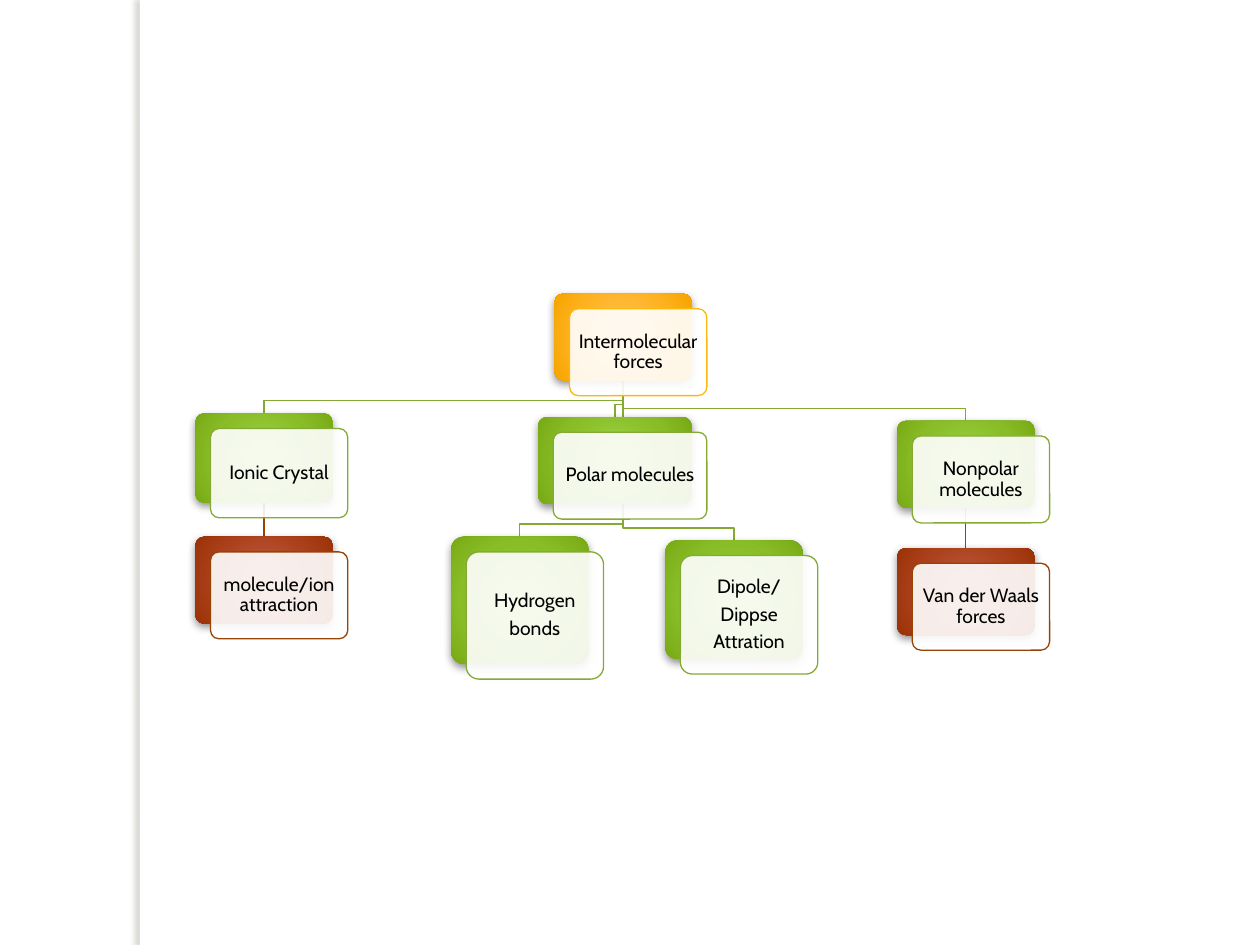
from dataclasses import dataclass
from typing import Optional

from lxml.etree import SubElement
from pptx import Presentation
from pptx.dml.color import RGBColor
from pptx.enum.shapes import MSO_CONNECTOR, MSO_SHAPE
from pptx.enum.text import MSO_ANCHOR, PP_ALIGN
from pptx.oxml.ns import qn
from pptx.util import Inches, Pt

COLORS = {"white": "FFFFFF", "black": "000000", "edge": "736F63",
          "gold": "FEB80A", "green": "84AA33", "brown": "964305"}
SHADES = {"gold": ["FFBF54", "FFBF53", "FFB221", "F6A500", "D69900"],
          "green": ["9AD041", "9ACF41", "88BD27", "79AB17", "77AC08"],
          "brown": ["BD583A", "BC573A", "AB411C", "9C3308", "7E3600"]}
STOPS = [0, 15, 62, 97, 100]
SHIFT = (0.12, 0.12)  # front panel against its back panel
DROP = 0.1            # last leg of a branch line
FONT = {"name": "Cabin", "size": Pt(11)}
PARA = {"alignment": PP_ALIGN.CENTER, "line_spacing": 0.9,
        "space_after": Pt(3.85)}
FRAME = {"word_wrap": True, "vertical_anchor": MSO_ANCHOR.MIDDLE,
         **{f"margin_{side}": Inches(0.03)
            for side in ("left", "right", "top", "bottom")}}


@dataclass
class Card:
    lines: list[str]
    hue: str
    left: float
    top: float
    wide: float = 1.09
    high: float = 0.69
    above: Optional["Card"] = None

    @property
    def mid(self) -> float:
        return self.left + self.wide / 2


def rgb(key: str) -> RGBColor:
    return RGBColor.from_string(COLORS[key])


def apply(target, values: dict) -> None:
    for name, value in values.items():
        setattr(target, name, value)


def add_tag(root, tag: str, **attrs):
    return SubElement(root, qn(f"a:{tag}"),
                      {key: str(value) for key, value in attrs.items()})


def add_shade(shape, key: str, alpha: int, blur: int, dist: int,
              angle: int) -> None:
    shape.shadow.inherit = False
    effects = shape.element.spPr.find(qn("a:effectLst"))
    shade = add_tag(effects, "outerShdw", blurRad=Pt(blur), dist=Pt(dist),
                    dir=angle * 60000, rotWithShape=0)
    color = add_tag(shade, "srgbClr", val=COLORS[key])
    add_tag(color, "alpha", val=alpha * 1000)


def add_glow(shape, hue: str) -> None:
    """Give the shape a round gradient, lightest in the middle."""
    shape.fill.solid()
    props = shape.element.spPr
    plain = props.find(qn("a:solidFill"))
    grad = add_tag(props, "gradFill", rotWithShape=1)
    stops = add_tag(grad, "gsLst")
    for pos, color in zip(STOPS, SHADES[hue]):
        stop = add_tag(stops, "gs", pos=pos * 1000)
        add_tag(stop, "srgbClr", val=color)
    focus = add_tag(grad, "path", path="circle")
    add_tag(focus, "fillToRect", l=50000, t=50000, r=50000, b=50000)
    props.replace(plain, grad)


def add_panel(slide, left: float, top: float, card: Card):
    panel = slide.shapes.add_shape(
        MSO_SHAPE.ROUNDED_RECTANGLE, Inches(left), Inches(top),
        Inches(card.wide), Inches(card.high))
    panel.adjustments[0] = 0.1
    panel.shadow.inherit = False
    return panel


def add_card(slide, card: Card) -> None:
    back = add_panel(slide, card.left, card.top, card)
    add_glow(back, card.hue)
    back.line.fill.background()
    add_shade(back, "black", 43, 5, 2, 90)

    front = add_panel(slide, card.left + SHIFT[0], card.top + SHIFT[1], card)
    front.fill.solid()
    front.fill.fore_color.rgb = rgb("white")
    color = front.element.spPr.find(qn("a:solidFill"))[0]
    add_tag(color, "alpha", val=90000)
    front.line.color.rgb = rgb(card.hue)
    front.line.width = Pt(0.75)

    frame = front.text_frame
    apply(frame, FRAME)
    for num, text in enumerate(card.lines):
        para = frame.add_paragraph() if num else frame.paragraphs[0]
        apply(para, PARA)
        run = para.add_run()
        run.text = text
        apply(run.font, FONT)
        run.font.color.rgb = rgb("black")


def add_branch(slide, card: Card) -> None:
    """Join the card to the one above it."""
    start = card.above.mid, card.above.top + card.above.high
    bend = card.top - DROP
    route = [start, (start[0], bend), (card.mid, bend), (card.mid, card.top)]
    points = [(Inches(x), Inches(y)) for x, y in route]
    if card.mid == start[0]:
        line = slide.shapes.add_connector(
            MSO_CONNECTOR.STRAIGHT, *points[0], *points[-1])
        add_tag(line.element.spPr, "effectLst")
    else:
        build = slide.shapes.build_freeform(*points[0])
        build.add_line_segments(points[1:], close=False)
        line = build.convert_to_shape()
        line.fill.background()
        line.shadow.inherit = False
    line.line.color.rgb = rgb(card.hue)
    line.line.width = Pt(0.75)


def add_strip(slide) -> None:
    strip = slide.shapes.add_shape(
        MSO_SHAPE.RECTANGLE, Inches(1.11), 0, Inches(0.08), Inches(7.5))
    strip.fill.solid()
    strip.fill.fore_color.rgb = rgb("white")
    strip.line.fill.background()
    add_shade(strip, "edge", 25, 3, 3, 180)


def main() -> None:
    deck = Presentation()
    deck.slide_width, deck.slide_height = Inches(10), Inches(7.5)
    slide = deck.slides.add_slide(deck.slide_layouts[6])
    add_strip(slide)

    # The tree of forces
    root = Card(["Intermolecular forces"], "gold", 4.4, 2.33)
    ionic = Card(["Ionic Crystal"], "green", 1.55, 3.28, high=0.71, above=root)
    polar = Card(["Polar molecules"], "green", 4.27, 3.31, wide=1.22,
                 above=root)
    apolar = Card(["Nonpolar molecules"], "green", 7.12, 3.34, above=root)
    cards = [
        root, ionic,
        Card(["molecule/ion attraction"], "brown", 1.55, 4.26, above=ionic),
        polar,
        Card(["Hydrogen", "bonds"], "green", 3.58, 4.26, high=1.01,
             above=root),
        Card(["Dipole/", "Dippse", "Attration"], "green", 5.28, 4.29,
             high=0.94, above=root),
        apolar,
        Card(["Van der Waals forces"], "brown", 7.12, 4.35, above=apolar),
    ]

    # Lines lie behind the cards
    for card in reversed(cards):
        if card.above:
            add_branch(slide, card)
    for card in cards:
        add_card(slide, card)
    deck.save("out.pptx")


if __name__ == "__main__":
    main()
